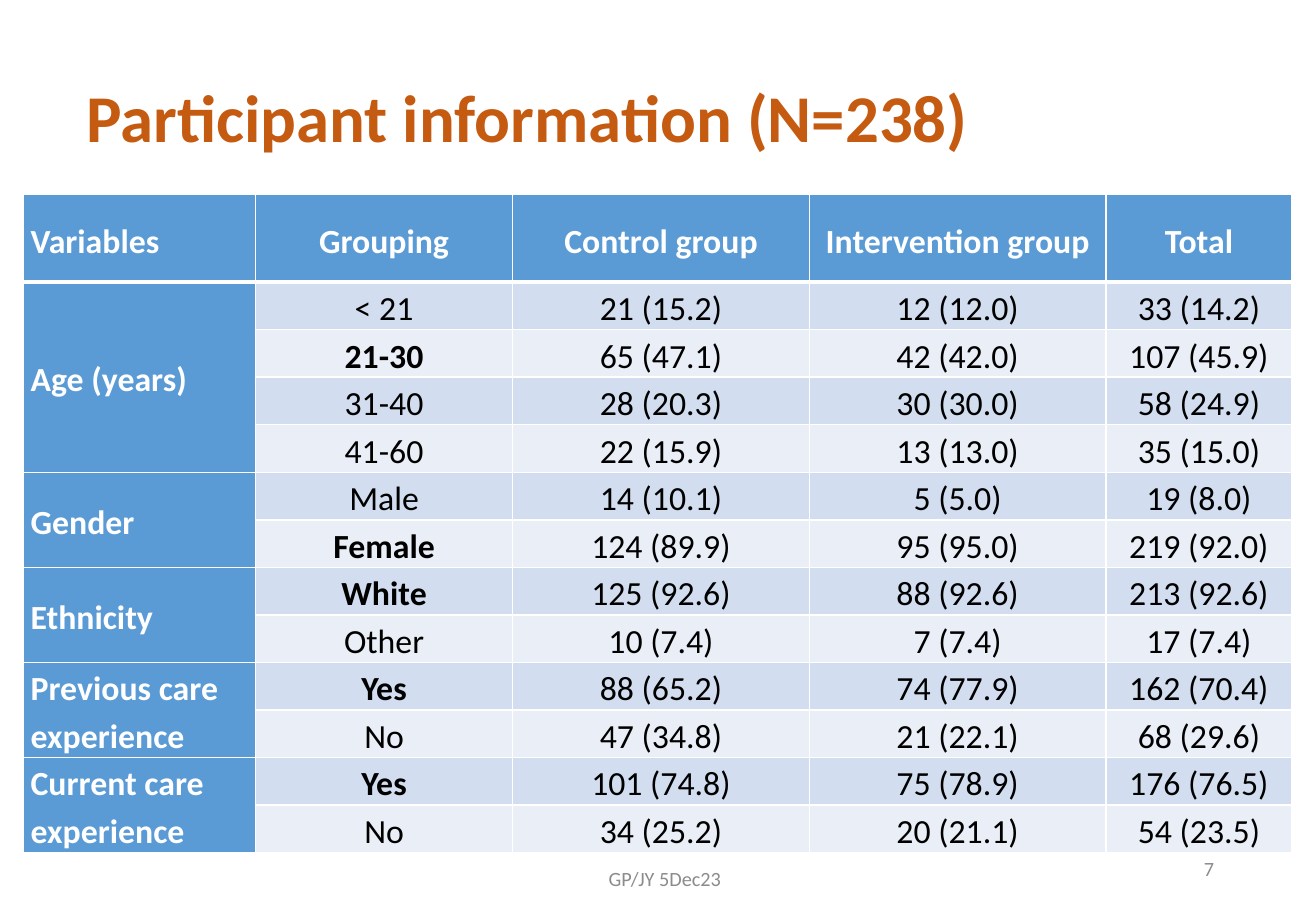
import pptx
import pptx.util
import pptx.dml.color
import pptx.enum.text
import pptx.oxml.ns
from lxml import etree

Cm, Pt = pptx.util.Cm, pptx.util.Pt
ALIGN = pptx.enum.text.PP_ALIGN
MID = pptx.enum.text.MSO_ANCHOR.MIDDLE

# Content: each group has (level, control, intervention, total)
TITLE = "Participant information (N=238)"
HEAD = ["Variables", "Grouping", "Control group", "Intervention group", "Total"]
GROUPS = [
    ("Age (years)", [
        ("< 21", "21 (15.2)", "12 (12.0)", "33 (14.2)"),
        ("21-30", "65 (47.1)", "42 (42.0)", "107 (45.9)"),
        ("31-40", "28 (20.3)", "30 (30.0)", "58 (24.9)"),
        ("41-60", "22 (15.9)", "13 (13.0)", "35 (15.0)")]),
    ("Gender", [
        ("Male", "14 (10.1)", "5 (5.0)", "19 (8.0)"),
        ("Female", "124 (89.9)", "95 (95.0)", "219 (92.0)")]),
    ("Ethnicity", [
        ("White", "125 (92.6)", "88 (92.6)", "213 (92.6)"),
        ("Other", "10 (7.4)", "7 (7.4)", "17 (7.4)")]),
    ("Previous care experience", [
        ("Yes", "88 (65.2)", "74 (77.9)", "162 (70.4)"),
        ("No", "47 (34.8)", "21 (22.1)", "68 (29.6)")]),
    ("Current care experience", [
        ("Yes", "101 (74.8)", "75 (78.9)", "176 (76.5)"),
        ("No", "34 (25.2)", "20 (21.1)", "54 (23.5)")]),
]
STRONG = {"21-30", "Female", "White", "Yes"}
NOTES = [  # text, left, top, width, alignment
    ("GP/JY 5Dec23", 9.25, 17.86, 9.3, ALIGN.CENTER),
    ("7", 19.43, 17.65, 6.2, ALIGN.RIGHT),
]
WIDTHS = [4.85, 5.38, 6.2, 6.2, 3.89]
HEAD_H, ROW_H = 1.83, 0.99
BLUE, WHITE, BLACK = "5B9BD5", "FFFFFF", "000000"
BANDS = ["D2DEEF", "EAEFF7"]


def tint(code):
    return pptx.dml.color.RGBColor.from_string(code)


def write(frame, text, size=20, color=BLACK, bold=False,
          align=ALIGN.LEFT, line=1.0, after=0):
    frame.word_wrap = True
    para = frame.paragraphs[0]
    para.alignment, para.line_spacing = align, line
    para.space_after = Pt(after)
    run = para.add_run()
    run.text = text
    font = run.font
    font.name, font.size, font.bold = "Calibri", Pt(size), bold
    font.color.rgb = tint(color)


def style(cell, fill, base=1):
    """Set margins, white borders and fill; base is the bottom line in points."""
    cell.margin_left = cell.margin_right = Cm(0.15)
    cell.margin_top = cell.margin_bottom = 0
    cell.vertical_anchor = MID
    props = cell._tc.get_or_add_tcPr()
    qn = pptx.oxml.ns.qn
    for side, width in (("L", 1), ("R", 1), ("T", 1), ("B", base)):
        edge = etree.SubElement(props, qn(f"a:ln{side}"), w=str(Pt(width)))
        paint = etree.SubElement(edge, qn("a:solidFill"))
        etree.SubElement(paint, qn("a:srgbClr"), val=WHITE)
    cell.fill.solid()
    cell.fill.fore_color.rgb = tint(fill)


def label(cell, text, **form):
    write(cell.text_frame, text, line=1.15, after=10, **form)


deck = pptx.Presentation()
deck.slide_width, deck.slide_height = Cm(27.51), Cm(19.05)
slide = deck.slides.add_slide(deck.slide_layouts[5])

# Title
title = slide.shapes.title
title.left, title.top, title.width, title.height = map(Cm, (1.55, 1.98, 23.72, 1.09))
title.text_frame.vertical_anchor = MID
title.text_frame.auto_size = pptx.enum.text.MSO_AUTO_SIZE.NONE
write(title.text_frame, TITLE, size=39.6, color="C55A11", bold=True, line=0.9)

# Table grid
count = sum(len(rows) for _, rows in GROUPS)
grid = slide.shapes.add_table(
    count + 1, len(HEAD), Cm(0.49), Cm(4.07),
    Cm(sum(WIDTHS)), Cm(HEAD_H + count * ROW_H)).table
for col, width in zip(grid.columns, WIDTHS):
    col.width = Cm(width)
for r, row in enumerate(grid.rows):
    row.height = Cm(ROW_H if r else HEAD_H)
    for c, cell in enumerate(row.cells):
        fill = BANDS[(r - 1) % 2] if r and c else BLUE
        style(cell, fill, base=1 if r else 3)

# Table text
for c, text in enumerate(HEAD):
    label(grid.cell(0, c), text, color=WHITE, bold=True,
          align=ALIGN.CENTER if c else ALIGN.LEFT)
top = 1
for name, rows in GROUPS:
    first = grid.cell(top, 0)
    first.merge(grid.cell(top + len(rows) - 1, 0))
    label(first, name, color=WHITE, bold=True)
    for r, row in enumerate(rows, top):
        for c, text in enumerate(row, 1):
            label(grid.cell(r, c), text, bold=text in STRONG, align=ALIGN.CENTER)
    top += len(rows)

# Footer and page number
for text, left, high, width, align in NOTES:
    box = slide.shapes.add_textbox(Cm(left), Cm(high), Cm(width), Cm(1.02))
    box.text_frame.vertical_anchor = MID
    write(box.text_frame, text, size=12, color="8C8C8C", align=align)

deck.save("out.pptx")
